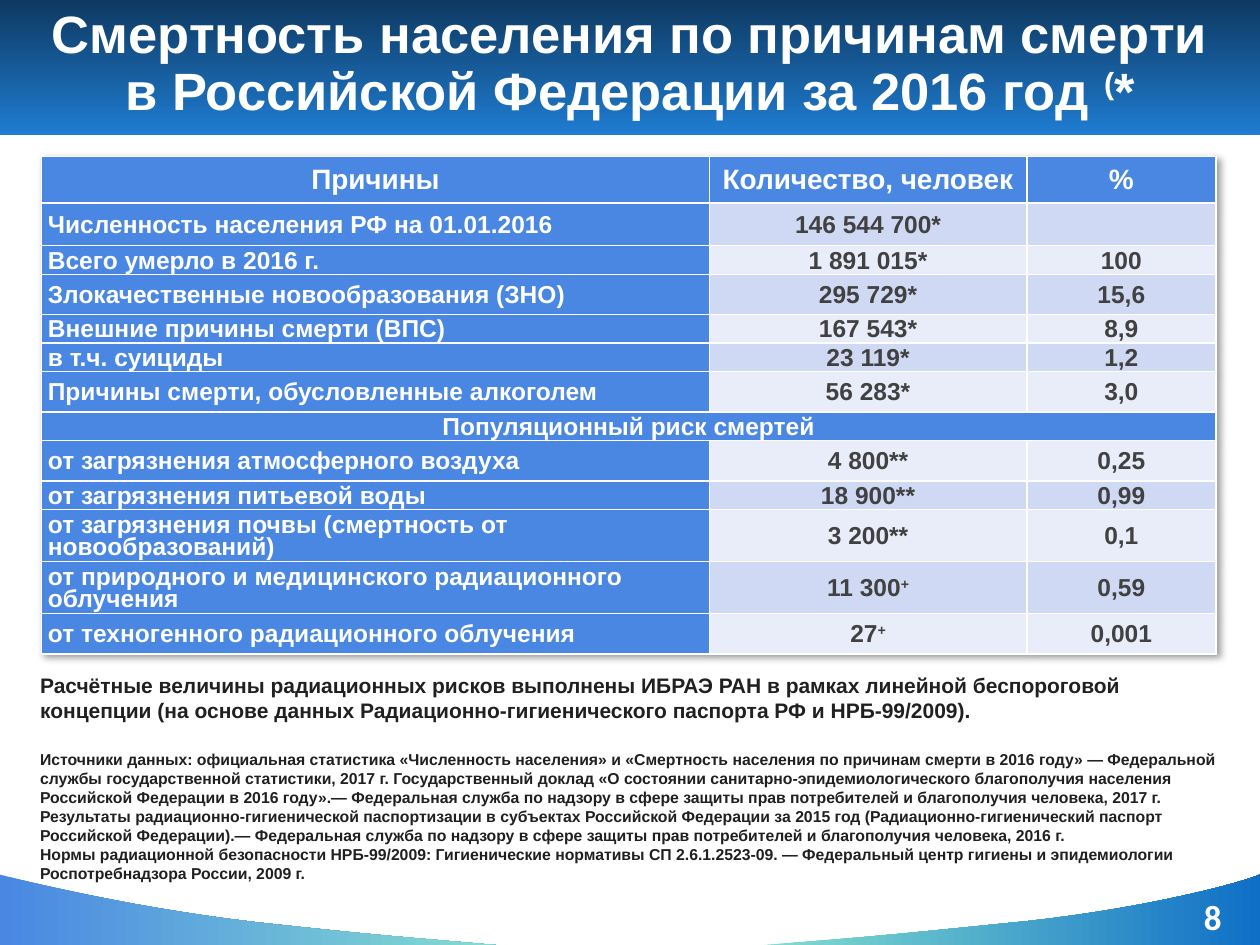
from lxml.etree import SubElement
from pptx import Presentation
from pptx.dml.color import RGBColor
from pptx.enum.shapes import MSO_SHAPE
from pptx.enum.text import MSO_ANCHOR, MSO_AUTO_SIZE, PP_ALIGN
from pptx.oxml import parse_xml
from pptx.oxml.ns import nsdecls
from pptx.util import Inches, Pt

WHITE = RGBColor(0xFF, 0xFF, 0xFF)
INK = RGBColor(0x20, 0x20, 0x20)
GRAY = RGBColor(0x41, 0x41, 0x41)
NAVY = RGBColor(0x0E, 0x39, 0x61)
AZURE = RGBColor(0x1F, 0x7C, 0xD1)
BLUE = RGBColor(0x49, 0x87, 0xE3)
TEAL = RGBColor(0x85, 0xDF, 0xD0)
DEEP_BLUE = RGBColor(0x0F, 0x6F, 0xC6)
BANDS = [RGBColor(0xE9, 0xED, 0xFA), RGBColor(0xD0, 0xD9, 0xF4)]

COLUMN_WIDTHS = [5.3, 2.52, 1.5]
ROW_HEIGHTS = [0.37, 0.32, 0.21, 0.32, 0.21, 0.21, 0.32, 0.21, 0.32, 0.22, 0.39, 0.39, 0.32]
ROWS = [
    ["Причины", "Количество, человек", "%"],
    ["Численность населения РФ на 01.01.2016", "146 544 700*", ""],
    ["Всего умерло в 2016 г.", "1 891 015*", "100"],
    ["Злокачественные новообразования (ЗНО)", "295 729*", "15,6"],
    ["Внешние причины смерти (ВПС)", "167 543*", "8,9"],
    ["в т.ч. суициды", "23 119*", "1,2"],
    ["Причины смерти, обусловленные алкоголем", "56 283*", "3,0"],
    ["Популяционный риск смертей"],
    ["от загрязнения атмосферного воздуха", "4 800**", "0,25"],
    ["от загрязнения питьевой воды", "18 900**", "0,99"],
    ["от загрязнения почвы (смертность от новообразований)", "3 200**", "0,1"],
    ["от природного и медицинского радиационного облучения", "11 300^+", "0,59"],
    ["от техногенного радиационного облучения", "27^+", "0,001"],
]
RISK_NOTE = (
    "Расчётные величины радиационных рисков выполнены ИБРАЭ РАН в рамках линейной беспороговой "
    "концепции (на основе данных Радиационно-гигиенического паспорта РФ и НРБ-99/2009)."
)
SOURCES = [
    "Источники данных: официальная статистика «Численность населения» и «Смертность населения по "
    "причинам смерти в 2016 году» — Федеральной службы государственной статистики, 2017 г. "
    "Государственный доклад «О состоянии санитарно-эпидемиологического благополучия населения "
    "Российской Федерации в 2016 году».— Федеральная служба по надзору в сфере защиты прав "
    "потребителей и благополучия человека, 2017 г.",
    "Результаты радиационно-гигиенической паспортизации в субъектах Российской Федерации за 2015 год "
    "(Радиационно-гигиенический паспорт Российской Федерации).— Федеральная служба по надзору в сфере "
    "защиты прав потребителей и благополучия человека, 2016 г.",
    "Нормы радиационной безопасности НРБ-99/2009: Гигиенические нормативы СП 2.6.1.2523-09. — "
    "Федеральный центр гигиены и эпидемиологии Роспотребнадзора России, 2009 г.",
]
LEFT_WAVE = [(4.04, 7.51), (3.37, 7.45), (3.14, 7.44), (2.04, 7.32), (0.92, 7.19), (0, 6.94), (-0.01, 6.94)]
RIGHT_WAVE = [(5.94, 7.51), (6.6, 7.46), (6.88, 7.44), (7.96, 7.33), (9.05, 7.23), (9.91, 6.99), (10, 6.94)]


def bezier(points, t):
    weights = [(1 - t) ** 3, 3 * t * (1 - t) ** 2, 3 * t**2 * (1 - t), t**3]
    return tuple(Inches(sum(w * point[axis] for w, point in zip(weights, points))) for axis in (0, 1))


class MortalitySlide:
    def __init__(self, page, font_name="Arial"):
        self.page = page
        self.font_name = font_name

    def paint(self, shape, colors, angle=0, start=0):
        shape.shadow.inherit = False
        shape.line.fill.background()
        shape.fill.gradient()
        shape.fill.gradient_angle = angle
        for stop, color, position in zip(shape.fill.gradient_stops, colors, (start, 1)):
            stop.color.rgb = color
            stop.position = position

    def band(self, left, top, width, height, colors):
        area = map(Inches, (left, top, width, height))
        self.paint(self.page.shapes.add_shape(MSO_SHAPE.RECTANGLE, *area), colors, 270)

    def wave(self, curve, corner_x, colors, start=0):
        steps = 16
        outline = [bezier(curve[first:first + 4], step / steps)
                   for first in (0, 3) for step in range(1, steps + 1)]
        builder = self.page.shapes.build_freeform(*map(Inches, curve[0]))
        builder.add_line_segments(outline + [(Inches(corner_x), Inches(7.51))], close=True)
        self.paint(builder.convert_to_shape(), colors, start=start)

    def fill_para(self, para, text, size, color, align=None, spacing=None, font_name=None):
        base, *raised = text.split("^")
        para.text = base
        para.alignment = align
        para.line_spacing = spacing
        for part in raised:
            span = para.add_run()
            span.text = part[0]
            span.font._element.set("baseline", "30000")
            if part[1:]:
                para.add_run().text = part[1:]
        for span in para.runs:
            span.font.name = font_name or self.font_name
            span.font.size = Pt(size)
            span.font.bold = True
            span.font.color.rgb = color

    def text(self, area, lines, size, color, inset=None, anchor=MSO_ANCHOR.TOP, grow=False, **style):
        frame = self.page.shapes.add_textbox(*map(Inches, area)).text_frame
        frame.word_wrap = True
        frame.vertical_anchor = anchor
        if grow:
            frame.auto_size = MSO_AUTO_SIZE.SHAPE_TO_FIT_TEXT
        if inset is not None:
            frame.margin_left = frame.margin_right = Inches(inset)
            frame.margin_top = frame.margin_bottom = Inches(inset)
        for index, line in enumerate(lines):
            para = frame.add_paragraph() if index else frame.paragraphs[0]
            self.fill_para(para, line, size, color, **style)

    def cell(self, cell, text, size, color, fill, align):
        cell.fill.solid()
        cell.fill.fore_color.rgb = fill
        cell.vertical_anchor = MSO_ANCHOR.MIDDLE
        cell.margin_left = cell.margin_right = Inches(0.05)
        cell.margin_top, cell.margin_bottom = Inches(0.04), 0
        self.fill_para(cell.text_frame.paragraphs[0], text, size, color, align, 0.8)

    def table(self, left, top, rows, widths, heights):
        area = map(Inches, (left, top, sum(widths), sum(heights)))
        table = self.page.shapes.add_table(len(rows), len(widths), *area).table
        table.horz_banding = False
        for column, width in zip(table.columns, widths):
            column.width = Inches(width)
        for number, (row, height, texts) in enumerate(zip(table.rows, heights, rows)):
            row.height = Inches(height)
            heading = number == 0 or len(texts) == 1
            if len(texts) == 1:
                table.cell(number, 0).merge(table.cell(number, len(widths) - 1))
            for index, text in enumerate(texts):
                strong = heading or index == 0
                self.cell(
                    table.cell(number, index), text, 14 if number else 16,
                    WHITE if strong else GRAY, BLUE if strong else BANDS[number % 2],
                    PP_ALIGN.CENTER if heading or index else PP_ALIGN.LEFT,
                )
        effects = parse_xml(f"<a:effectLst {nsdecls('a')}/>")
        namespace = "{" + effects.nsmap["a"] + "}"
        shadow = SubElement(effects, namespace + "outerShdw", blurRad="50800", dist="38100",
                            dir="2700000", algn="tl", rotWithShape="0")
        black = SubElement(shadow, namespace + "srgbClr", val="000000")
        SubElement(black, namespace + "alpha", val="40000")
        table._tbl.tblPr.insert(0, effects)


def main():
    deck = Presentation()
    deck.slide_width, deck.slide_height = Inches(10), Inches(7.5)
    slide = MortalitySlide(deck.slides.add_slide(deck.slide_layouts[6]))
    slide.band(0, 0, 10, 1.07, (NAVY, AZURE))
    slide.wave(LEFT_WAVE, -0.01, (BLUE, TEAL))
    slide.wave(RIGHT_WAVE, 10, (TEAL, DEEP_BLUE), 0.02)
    title = "Смертность населения по причинам смерти\nв Российской Федерации за 2016 год ^(*"
    slide.text((0, -0.03, 10, 1.09), [title], 30, WHITE, inset=0.04,
               anchor=MSO_ANCHOR.MIDDLE, align=PP_ALIGN.CENTER, spacing=0.9)
    slide.text((9.33, 7.11, 0.59, 0.35), ["8"], 20, WHITE, inset=0,
               align=PP_ALIGN.CENTER, font_name="Calibri")
    slide.table(0.33, 1.24, ROWS, COLUMN_WIDTHS, ROW_HEIGHTS)
    slide.text((0.22, 5.9, 9.67, 1.16), SOURCES, 9, INK, anchor=MSO_ANCHOR.MIDDLE, grow=True)
    slide.text((0.22, 5.29, 9.3, 0.5), [RISK_NOTE], 12, INK, grow=True)
    deck.save("out.pptx")


if __name__ == "__main__":
    main()
